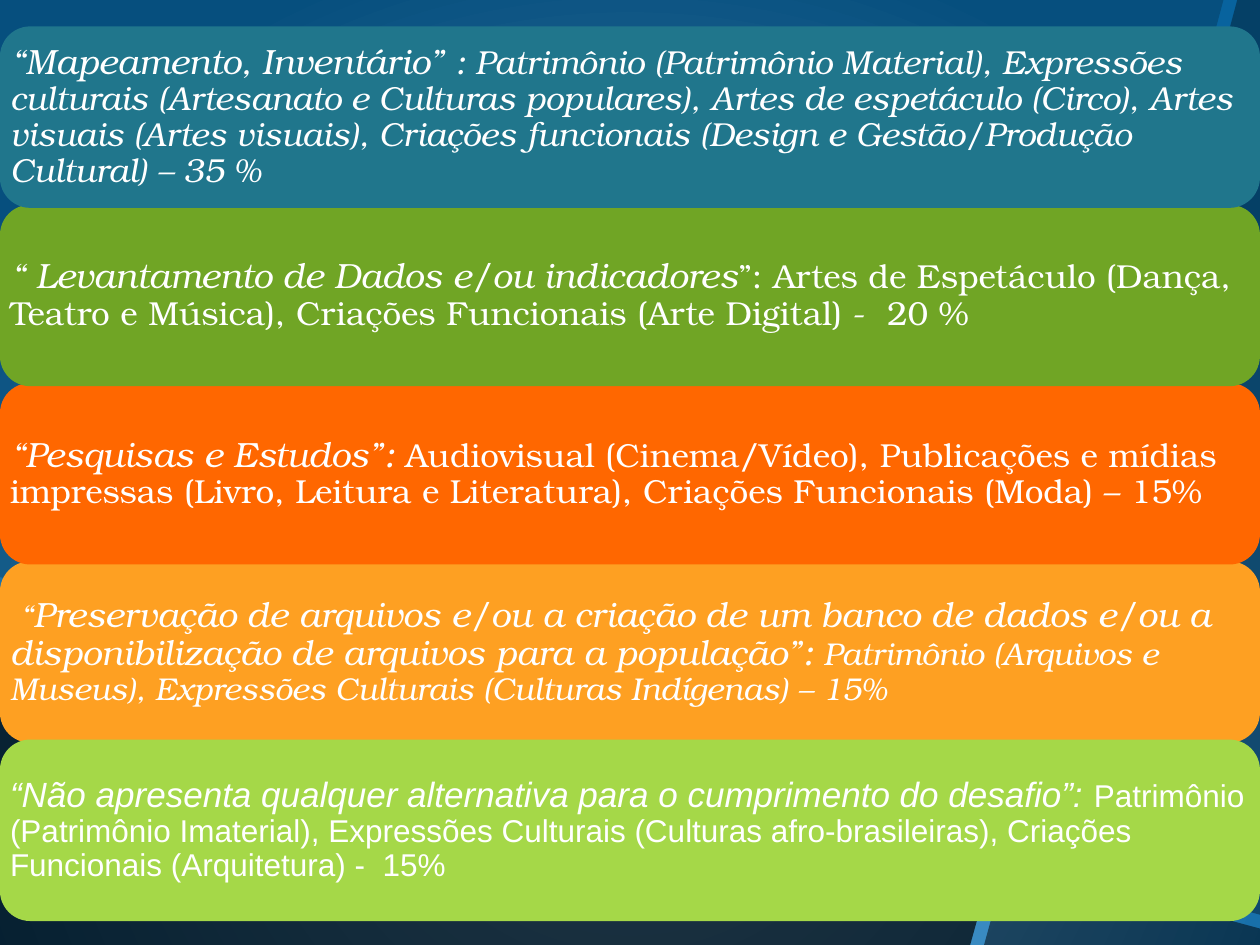
from lxml import etree
from pptx import Presentation
from pptx.dml.color import RGBColor
from pptx.enum import shapes, text
from pptx.oxml import ns
from pptx.util import Inches, Pt

SERIF = "TeX Gyre Bonum"
PANEL_TOP = 0.21
PANEL_STEP = 1.415
PANEL_HEIGHT = 1.44

SHADES = [
    (20, [(0, 0), (9.71, 0), (7.94, 6.61), (7.91, 6.67), (7.83, 6.68), (0, 4.58)]),
    (70, [(0, 4.68), (7.8, 6.78), (7.86, 6.82), (7.87, 6.89), (7.7, 7.5), (0, 7.5)]),
    (50, [(8.08, 6.85), (10, 7.37), (10, 7.5), (7.81, 7.5), (7.97, 6.92), (8.04, 6.85)]),
    (35, [(9.82, 0), (10, 0), (10, 7.26), (8.1, 6.75), (8.05, 6.71), (8.04, 6.64)]),
]

PANELS = [
    (3, "FEA022", SERIF, [
        (" “", 18, True),
        ("Preservação de arquivos e/ou a criação de um banco de dados e/ou a "
         "disponibilização de arquivos para a população”:", 20, True),
        (" Patrimônio (Arquivos e Museus), Expressões Culturais "
         "(Culturas Indígenas) – 15%", 18, True)]),
    (2, "FF6700", SERIF, [
        ("“Pesquisas e Estudos”: ", 20, True),
        ("Audiovisual (Cinema/Vídeo), Publicações e mídias impressas (Livro, "
         "Leitura e Literatura), Criações Funcionais (Moda) – 15%", 19, False)]),
    (1, "70A525", SERIF, [
        ("“ Levantamento de Dados e/ou indicadores", 20, True),
        ("”: Artes de Espetáculo (Dança, Teatro e Música), Criações Funcionais "
         "(Arte Digital) -  20 %", 19, False)]),
    (4, "A5D848", "Arial", [
        ("“Não apresenta qualquer alternativa para o cumprimento do desafio”: ", 20, True),
        ("Patrimônio (Patrimônio Imaterial), Expressões Culturais (Culturas "
         "afro-brasileiras), Criações Funcionais (Arquitetura) -  15%", 18, False)]),
    (0, "20768C", SERIF, [
        ("“Mapeamento, Inventário”", 20, True),
        (" : Patrimônio (Patrimônio Material), Expressões culturais (Artesanato e "
         "Culturas populares), Artes de espetáculo (Circo), Artes visuais (Artes "
         "visuais), Criações funcionais (Design e Gestão/Produção Cultural) – 35 %",
         19, True)]),
]


def color(value):
    return RGBColor.from_string(value)


def paint(shape, value):
    shape.shadow.inherit = False
    shape.fill.solid()
    shape.fill.fore_color.rgb = color(value)
    shape.line.fill.background()


def add_background(page):
    fill = page.background.fill
    fill.gradient()
    for stop, value in zip(fill.gradient_stops, ("70B6E8", "08639E")):
        stop.color.rgb = color(value)
    linear = page.background._cSld.find(".//" + ns.qn("a:lin"))
    radial = etree.Element(ns.qn("a:path"), {"path": "circle"})
    etree.SubElement(radial, ns.qn("a:fillToRect"),
                     {"l": "50000", "t": "50000", "r": "50000", "b": "0"})
    linear.getparent().replace(linear, radial)


def add_shade(page, opacity, points):
    start, *rest = [(Inches(x), Inches(y)) for x, y in points]
    builder = page.shapes.build_freeform(*start)
    builder.add_line_segments(rest, close=True)
    shade = builder.convert_to_shape()
    paint(shade, "000000")
    fill_color = shade._element.spPr.find(".//" + ns.qn("a:srgbClr"))
    etree.SubElement(fill_color, ns.qn("a:alpha"), {"val": str(opacity * 1000)})


def add_panel(page, left, top, width, height, fill, font_name, spans):
    panel = page.shapes.add_shape(
        shapes.MSO_SHAPE.ROUNDED_RECTANGLE,
        Inches(left), Inches(top), Inches(width), Inches(height))
    paint(panel, fill)
    frame = panel.text_frame
    frame.word_wrap = True
    frame.vertical_anchor = text.MSO_ANCHOR.MIDDLE
    frame.margin_left = frame.margin_right = Inches(0.01)
    frame.margin_top = frame.margin_bottom = Inches(0.01)
    para = frame.paragraphs[0]
    para.alignment = text.PP_ALIGN.LEFT
    para.line_spacing = 0.9
    para.space_after = Pt(7)
    for wording, size, italic in spans:
        span = para.add_run()
        span.text = wording
        span.font.name = font_name
        span.font.size = Pt(size)
        span.font.italic = italic
        span.font.color.rgb = color("FFFFFF")


def main():
    deck = Presentation()
    deck.slide_width = Inches(10)
    deck.slide_height = Inches(7.5)
    page = deck.slides.add_slide(deck.slide_layouts[6])
    add_background(page)
    for opacity, points in SHADES:
        add_shade(page, opacity, points)
    for row, fill, font_name, spans in PANELS:
        add_panel(page, 0, PANEL_TOP + row * PANEL_STEP, 10, PANEL_HEIGHT,
                  fill, font_name, spans)
    deck.save("out.pptx")


if __name__ == "__main__":
    main()
